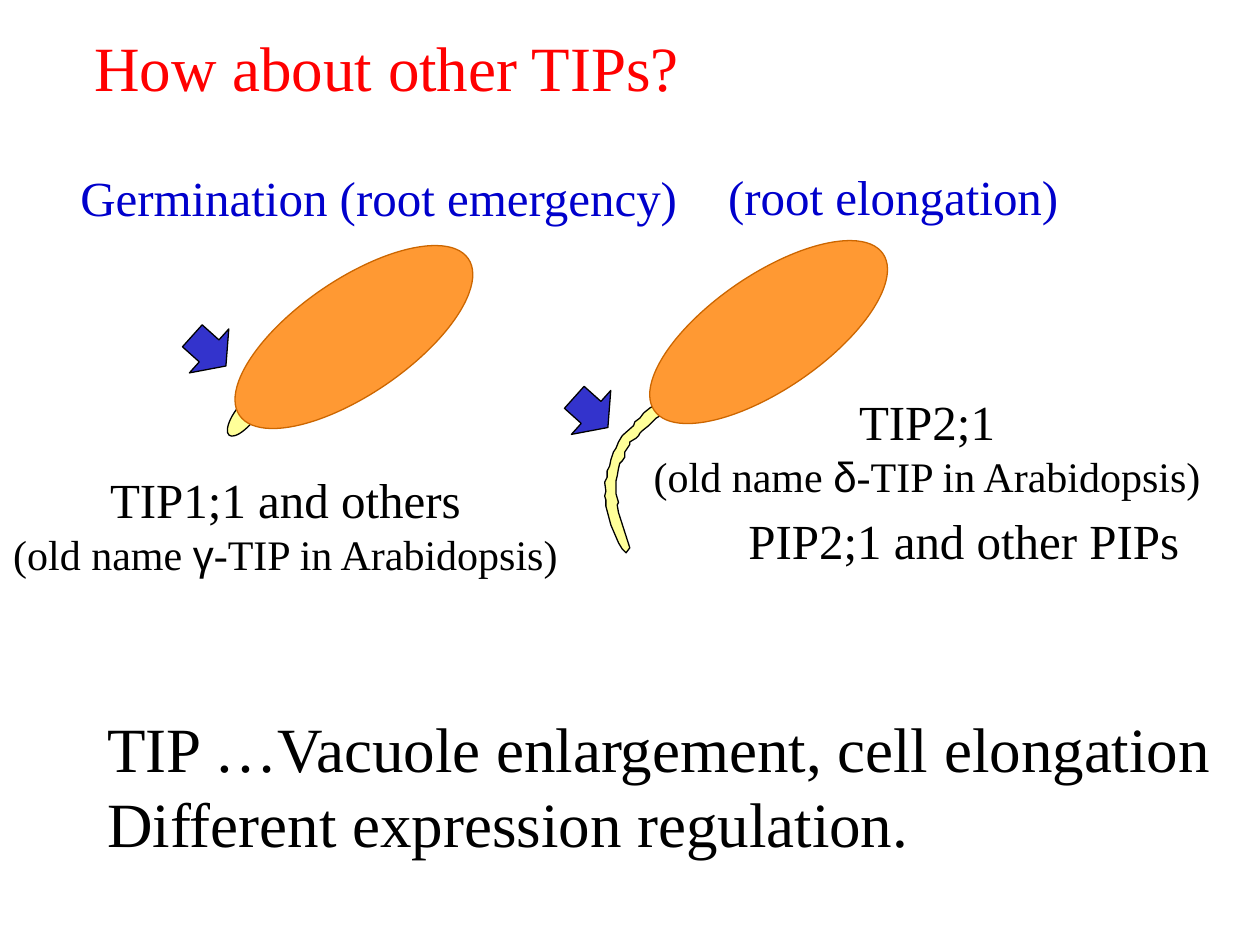
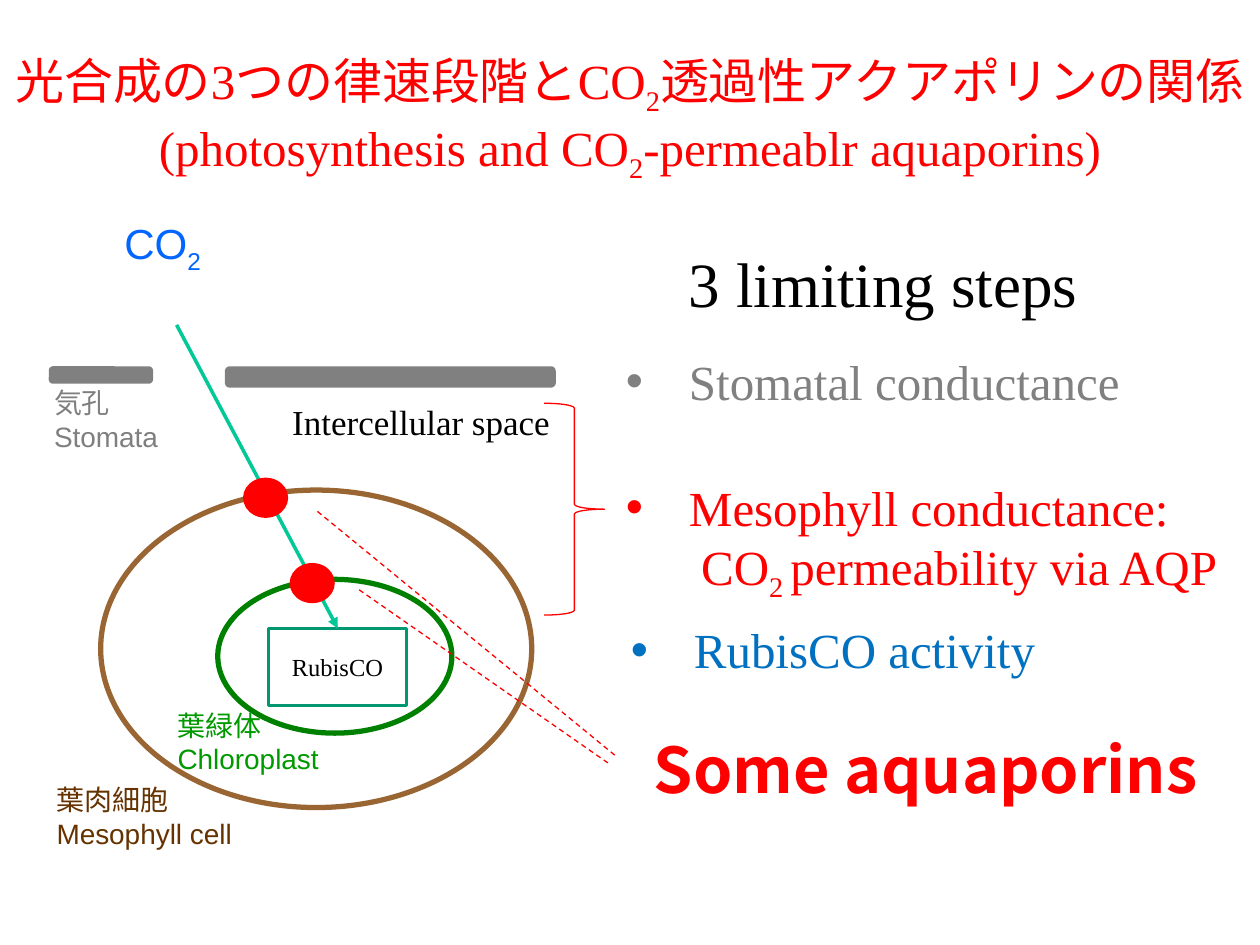
"""Build two slides on aquaporins in germinating seeds and in photosynthesis."""
import pptx
import pptx.dml.color
import pptx.enum.dml
import pptx.enum.shapes
import pptx.enum.text
import pptx.oxml
import pptx.oxml.ns
import pptx.util
from dataclasses import dataclass

Cm, Pt = pptx.util.Cm, pptx.util.Pt
SHAPE = pptx.enum.shapes.MSO_SHAPE
qn = pptx.oxml.ns.qn


@dataclass(frozen=True)
class Theme:
    serif: str = "Times New Roman"
    sans: str = "Arial"
    cjk: str = "Noto Sans CJK JP"
    black: str = "000000"
    red: str = "FF0000"
    stage: str = "0000CC"
    arrow: str = "3333CC"
    seed: str = "FF9933"
    seed_edge: str = "CC6600"
    root: str = "FFFF99"
    grey: str = "808080"
    stomata: str = "7F7F7F"
    cell: str = "996633"
    cell_text: str = "663300"
    chloroplast: str = "008000"
    chloroplast_text: str = "009900"
    enzyme: str = "009771"
    activity: str = "0070C0"
    gas: str = "0066FF"
    flow: str = "00C896"
    display: int = 36
    body: int = 28
    detail: int = 24
    note: int = 20
    label: int = 16
    small: int = 14
    thin: float = 0.75
    medium: int = 2
    thick: int = 3


T = Theme()
STYLES = {
    "heading": dict(size=T.display, color=T.red),
    "title": dict(size=T.body, color=T.red, center=True, wrap=True),
    "statement": dict(size=T.display),
    "stage": dict(size=T.body, color=T.stage),
    "gene": dict(size=T.body, center=True),
    "note": dict(size=T.note),
    "stomatal": dict(size=T.body, color=T.grey, bullet=True),
    "mesophyll": dict(size=T.body, color=T.red, bullet=True),
    "activity": dict(size=T.body, color=T.activity, bullet=True, wrap=True),
    "callout": dict(size=T.display, color=T.red, name=T.cjk, bold=True, wrap=True),
    "gas": dict(size=T.detail, color=T.gas, name=T.sans, center=True),
    "stomata": dict(size=T.label, color=T.stomata, name=T.sans),
    "cell": dict(size=T.label, color=T.cell_text, name=T.sans),
    "chloroplast": dict(size=T.label, color=T.chloroplast_text, name=T.sans),
}
SUB = dict(sub=True)
DETAIL = dict(size=T.detail)
GREEK = dict(size=T.detail, name=T.sans)


def gene(name, greek):
    return [[(name, {})], [("(old name ", DETAIL), (greek, GREEK),
                           ("-TIP in Arabidopsis)", DETAIL)]]


def lines(*texts):
    return [[(text, {})] for text in texts]


TIP_TEXTS = [
    ("stage", (1.37, 3.25, 12.67, 1.45), lines("Germination (root emergency)")),
    ("stage", (14.43, 3.23, 7.24, 1.45), lines("(root elongation)")),
    ("gene", (0, 9.35, 11.51, 2.49), gene("TIP1;1 and others", "γ")),
    ("gene", (12.9, 7.77, 11.58, 2.49), gene("TIP2;1", "δ")),
    ("gene", (14.78, 10.16, 9.3, 1.45), lines("PIP2;1 and other PIPs")),
    ("statement", (1.91, 14.17, 22.99, 3.33),
     lines("TIP …Vacuole enlargement, cell elongation", "Different expression regulation.")),
    ("heading", (1.65, 0.46, 12.75, 1.8), lines("How about other TIPs?")),
]
SEED_SIZE, SEEDS = (5.59, 2.31), [(4.34, 5.64), (12.7, 5.54)]
ARROW_SIZE, ARROWS = (0.91, 1.19), [(3.76, 6.48), (11.46, 7.72)]
SPROUT = (4.75, 7.8, 0.41, 1.09)
ROOT_AT, ROOT_UNIT = (12.19, 7.92), 0.0254
ROOT = [
    (53, 2), (48, 5), (45, 6), (41, 9), (36, 12), (31, 16), (28, 20), (24, 23),
    (23, 26), (14, 34), (11, 39), (9, 44), (7, 47), (5, 53), (4, 58), (2, 62),
    (2, 67), (0, 71), (1, 78), (0, 82), (1, 85), (1, 90), (5, 105), (11, 119),
    (14, 124), (17, 127), (20, 123), (11, 95), (10, 89), (11, 87), (9, 80),
    (9, 70), (10, 66), (11, 60), (12, 56), (14, 54), (16, 51), (16, 47), (20, 41),
    (20, 39), (25, 36), (27, 34), (28, 32), (30, 30), (35, 26), (41, 20), (51, 14),
    (53, 13), (56, 11), (54, 3), (52, 0),
]

CO2_TEXTS = [
    ("title", (0, 0.89, 25.4, 2.64),
     [[("光合成の3つの律速段階とCO", {}), ("2", SUB),
       ("透過性アクアポリンの関係\n(photosynthesis and CO", {}), ("2", SUB),
       ("-permeablr aquaporins)", {})]]),
    ("note", (5.64, 7.95, 5.74, 1.12), lines("Intercellular space")),
    ("stomatal", (12.37, 6.96, 10.57, 1.45), lines("Stomatal conductance")),
    ("mesophyll", (12.37, 9.5, 12.62, 2.64),
     [[("Mesophyll conductance:\n CO", {}), ("2 ", SUB), ("permeability via AQP", {})]]),
    ("activity", (12.47, 12.37, 12.55, 1.45), lines("RubisCO activity")),
    ("gas", (2.06, 4.27, 2.44, 1.45), [[("CO", {}), ("2", SUB)]]),
    ("stomata", (0.84, 7.65, 2.64, 1.63), lines("気孔", "Stomata")),
    ("cell", (0.89, 15.65, 4.09, 1.63), lines("葉肉細胞", "Mesophyll cell")),
    ("chloroplast", (3.33, 14.15, 3.4, 1.63), lines("葉緑体", "Chloroplast")),
    ("callout", (12.93, 14.61, 11.96, 1.8), lines("Some aquaporins")),
    ("statement", (13.64, 4.8, 8.74, 1.8), lines("3 limiting steps")),
]
CHLOROPLAST = (4.39, 11.68, 4.72, 3.1)
CELL = (2.03, 9.88, 8.69, 6.4)
ENZYME = (5.41, 12.67, 2.79, 1.55)
EPIDERMIS = [(1.02, 7.42, 2.03, 0.28), (4.57, 7.42, 6.6, 0.36)]
BRACE = (10.97, 8.13, 1.22, 4.27)
CHANNEL_SIZE, CHANNELS = (0.91, 0.81), [(5.84, 11.35), (4.9, 9.63)]
CO2_PATH = (3.56, 6.55, 6.81, 12.67)
POINTERS = [(6.4, 10.31, 12.45, 15.27), (7.24, 11.89, 12.27, 15.39)]


def rgb(value):
    return pptx.dml.color.RGBColor.from_string(value)


def write(p, runs, style):
    if style.get("center"):
        p.alignment = pptx.enum.text.PP_ALIGN.CENTER
    if style.get("bullet"):
        pPr = p._p.get_or_add_pPr()
        pPr.set("marL", str(Cm(1.27)))
        pPr.set("indent", str(-Cm(1.27)))
        for tag, key, value in (("a:buFont", "typeface", T.sans), ("a:buChar", "char", "•")):
            el = pptx.oxml.parse_xml(f'<{tag} {pptx.oxml.ns.nsdecls("a")}/>')
            el.set(key, value)
            pPr.append(el)
    for text, own in runs:
        fmt = {**style, **own}
        values = dict(size=Pt(fmt["size"]), name=fmt.get("name", T.serif),
                      bold=fmt.get("bold"))
        for i, part in enumerate(text.split("\n")):
            if i:
                p.add_line_break()
            r = p.add_run()
            r.text = part
            for key, value in values.items():
                setattr(r.font, key, value)
            r.font.color.rgb = rgb(fmt.get("color", T.black))
            if fmt.get("sub"):
                r._r.get_or_add_rPr().set("baseline", "-25000")


def add_texts(s, items):
    for kind, box, paragraphs in items:
        style = STYLES[kind]
        tf = s.shapes.add_textbox(*map(Cm, box)).text_frame
        tf.word_wrap = style.get("wrap", False)
        tf.auto_size = pptx.enum.text.MSO_AUTO_SIZE.SHAPE_TO_FIT_TEXT
        for i, runs in enumerate(paragraphs):
            write(tf.add_paragraph() if i else tf.paragraphs[0], runs, style)


def paint(sp, fill=None, line=None, width=T.thin, rotation=0):
    sp.shadow.inherit = False
    sp.rotation = rotation
    for part, color in ((sp.fill, fill), (sp.line.fill, line)):
        if color:
            part.solid()
            part.fore_color.rgb = rgb(color)
        else:
            part.background()
    if line:
        sp.line.width = Pt(width)
    return sp


def add_shape(s, kind, box, adjust=(), **look):
    sp = s.shapes.add_shape(kind, *map(Cm, box))
    for i, value in enumerate(adjust):
        sp.adjustments[i] = value
    return paint(sp, **look)


def add_line(s, ends, color, width, dashed=False, arrow=False):
    cx = s.shapes.add_connector(pptx.enum.shapes.MSO_CONNECTOR.STRAIGHT, *map(Cm, ends))
    cx.line.color.rgb = rgb(color)
    cx.line.width = Pt(width)
    if dashed:
        cx.line.dash_style = pptx.enum.dml.MSO_LINE.DASH
    spPr = cx._element.spPr
    if arrow:
        head = pptx.oxml.parse_xml(f'<a:tailEnd {pptx.oxml.ns.nsdecls("a")} type="triangle"/>')
        spPr.find(qn("a:ln")).append(head)
    spPr.append(pptx.oxml.parse_xml(f'<a:effectLst {pptx.oxml.ns.nsdecls("a")}/>'))


def build_tip_slide(s):
    add_shape(s, SHAPE.OVAL, SPROUT, fill=T.root, line=T.black, rotation=38)
    builder = s.shapes.build_freeform(*ROOT[0], scale=Cm(ROOT_UNIT))
    builder.add_line_segments(ROOT[1:], close=True)
    paint(builder.convert_to_shape(*map(Cm, ROOT_AT)), fill=T.root, line=T.black)
    for at in SEEDS:
        add_shape(s, SHAPE.OVAL, at + SEED_SIZE, fill=T.seed, line=T.seed_edge, rotation=325.6)
    for at in ARROWS:
        add_shape(s, SHAPE.RIGHT_ARROW, at + ARROW_SIZE, (0.5, 0.5),
                  fill=T.arrow, line=T.black, rotation=41.9)
    add_texts(s, TIP_TEXTS)


def build_co2_slide(s):
    add_shape(s, SHAPE.OVAL, CHLOROPLAST, line=T.chloroplast, width=T.thick)
    add_shape(s, SHAPE.OVAL, CELL, line=T.cell, width=T.thick)
    tf = add_shape(s, SHAPE.RECTANGLE, ENZYME, line=T.enzyme, width=T.medium).text_frame
    for side in ("left", "right", "top", "bottom"):
        setattr(tf, f"margin_{side}", 0)
    tf.vertical_anchor = pptx.enum.text.MSO_ANCHOR.MIDDLE
    write(tf.paragraphs[0], [("RubisCO", {})], dict(size=T.small, center=True))
    for box in EPIDERMIS:
        add_shape(s, SHAPE.ROUNDED_RECTANGLE, box, fill=T.grey, line=T.grey, width=T.medium)
    add_line(s, CO2_PATH, T.flow, T.medium, arrow=True)
    for at in CHANNELS:
        add_shape(s, SHAPE.OVAL, at + CHANNEL_SIZE, fill=T.red)
    for ends in POINTERS:
        add_line(s, ends, T.red, T.thin, dashed=True)
    add_shape(s, SHAPE.RIGHT_BRACE, BRACE, (0.08, 0.5), line=T.red)
    add_texts(s, CO2_TEXTS)


def main():
    prs = pptx.Presentation()
    prs.slide_width, prs.slide_height = Cm(25.4), Cm(19.05)
    for build in (build_tip_slide, build_co2_slide):
        build(prs.slides.add_slide(prs.slide_layouts[6]))
    prs.save("out.pptx")


if __name__ == "__main__":
    main()
